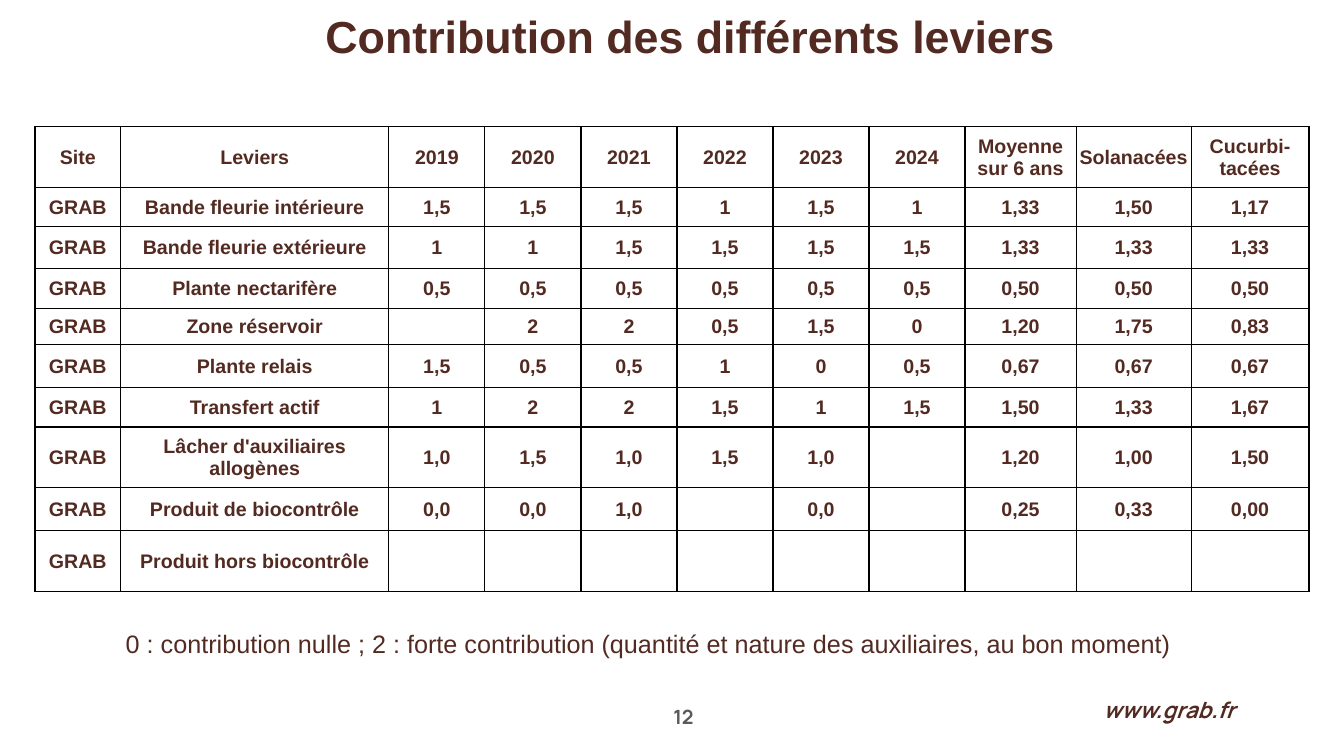
from dataclasses import dataclass

from lxml import etree
from pptx import Presentation
from pptx import util as u
from pptx.dml.color import RGBColor
from pptx.enum import text as t
from pptx.oxml import ns


@dataclass(frozen=True)
class Theme:
    brown: str = "532A21"
    grey: str = "595959"
    border: str = "000000"
    body_font: str = "Arial"
    footer_font: str = "Manrope"
    title_size: int = 32
    note_size: int = 18
    site_size: int = 16
    small_size: int = 14
    border_width: int = 1


@dataclass(frozen=True)
class Box:
    """A region of the page, in centimetres."""
    left: float
    top: float
    width: float
    height: float

    def lengths(self):
        return [u.Cm(v) for v in (self.left, self.top, self.width, self.height)]


THEME = Theme()
CELL_MARGIN = 0.03
YEARS = range(2019, 2025)
COLUMN_WIDTHS = [2.16, 6.76] + [2.42] * len(YEARS) + [2.8, 2.9, 2.97]
ROW_HEIGHTS = [1.53, 0.99, 1.05, 1.01, 0.91, 1.08, 1, 1.53, 1.08, 1.53]

HEADER = ["Site", "Leviers", *map(str, YEARS),
          "Moyenne sur 6 ans", "Solanacées", "Cucurbi-tacées"]
SITE = "GRAB"
# Each lever: six yearly scores, then the mean and the two crop families
LEVERS = {
    "Bande fleurie intérieure": "1,5|1,5|1,5|1|1,5|1|1,33|1,50|1,17",
    "Bande fleurie extérieure": "1|1|1,5|1,5|1,5|1,5|1,33|1,33|1,33",
    "Plante nectarifère": "0,5|0,5|0,5|0,5|0,5|0,5|0,50|0,50|0,50",
    "Zone réservoir": "|2|2|0,5|1,5|0|1,20|1,75|0,83",
    "Plante relais": "1,5|0,5|0,5|1|0|0,5|0,67|0,67|0,67",
    "Transfert actif": "1|2|2|1,5|1|1,5|1,50|1,33|1,67",
    "Lâcher d'auxiliaires allogènes": "1,0|1,5|1,0|1,5|1,0||1,20|1,00|1,50",
    "Produit de biocontrôle": "0,0|0,0|1,0||0,0||0,25|0,33|0,00",
    "Produit hors biocontrôle": "||||||||",
}


def write_text(frame, words, size, font=THEME.body_font, color=THEME.brown,
               bold=False, italic=False, align=t.PP_ALIGN.LEFT, spacing=None):
    para = frame.paragraphs[0]
    para.alignment = align
    if spacing:
        para.line_spacing = spacing
    span = para.add_run()
    span.text = words
    span.font.name = font
    span.font.size = u.Pt(size)
    span.font.bold = bold
    span.font.italic = italic
    span.font.color.rgb = RGBColor.from_string(color)


def add_text(page, box, words, anchor=t.MSO_ANCHOR.TOP, **style):
    frame = page.shapes.add_textbox(*box.lengths()).text_frame
    frame.word_wrap = True
    frame.vertical_anchor = anchor
    write_text(frame, words, **style)


def add_borders(cell):
    properties = cell._tc.get_or_add_tcPr()
    for position, side in enumerate(("lnL", "lnR", "lnT", "lnB")):
        line = etree.Element(ns.qn(f"a:{side}"), w=str(u.Pt(THEME.border_width)))
        fill = etree.SubElement(line, ns.qn("a:solidFill"))
        etree.SubElement(fill, ns.qn("a:srgbClr"), val=THEME.border)
        properties.insert(position, line)


def format_cell(cell, words):
    cell.fill.background()
    cell.margin_left = cell.margin_right = cell.margin_top = u.Cm(CELL_MARGIN)
    cell.margin_bottom = 0
    cell.vertical_anchor = t.MSO_ANCHOR.MIDDLE
    if words:
        write_text(cell.text_frame, words, size=THEME.small_size, bold=True,
                   align=t.PP_ALIGN.CENTER)
    add_borders(cell)


def add_lever_table(page, box):
    rows = [HEADER] + [[SITE, lever, *scores.split("|")]
                       for lever, scores in LEVERS.items()]
    frame = page.shapes.add_table(len(rows), len(HEADER), *box.lengths())
    table = frame.table
    table.first_row = table.horz_banding = False
    for column, width in zip(table.columns, COLUMN_WIDTHS):
        column.width = u.Cm(width)
    for row, height, values in zip(table.rows, ROW_HEIGHTS, rows):
        row.height = u.Cm(height)
        for cell, words in zip(row.cells, values):
            format_cell(cell, words)


def add_footer(page, box):
    # Page number, then the web address at the right
    add_text(page, Box(box.left + 16.13, box.top + 0.15, 1.6, 0.84), "12",
             anchor=t.MSO_ANCHOR.MIDDLE, size=THEME.small_size,
             font=THEME.footer_font, color=THEME.grey, bold=True,
             align=t.PP_ALIGN.RIGHT)
    add_text(page, Box(box.left + 27.56, box.top, 4.75, 0.89), "www.grab.fr",
             size=THEME.site_size, font=THEME.footer_font, bold=True,
             italic=True, spacing=0.9)


def build_page(page):
    # Title
    add_text(page, Box(7.95, 0.25, 19.94, 1.6),
             "Contribution des différents leviers",
             size=THEME.title_size, bold=True, spacing=0.9)
    # Scores by lever and year
    add_lever_table(page, Box(0.88, 3.19, sum(COLUMN_WIDTHS), sum(ROW_HEIGHTS)))
    # Key to the scores
    add_text(page, Box(2.92, 15.7, 27, 1.02),
             "0 : contribution nulle ; 2 : forte contribution "
             "(quantité et nature des auxiliaires, au bon moment)",
             size=THEME.note_size)
    add_footer(page, Box(0, 17.5, 33.87, 1))


def main():
    deck = Presentation()
    deck.slide_width, deck.slide_height = u.Cm(33.87), u.Cm(19.05)
    build_page(deck.slides.add_slide(deck.slide_layouts[6]))
    deck.save("out.pptx")


if __name__ == "__main__":
    main()
